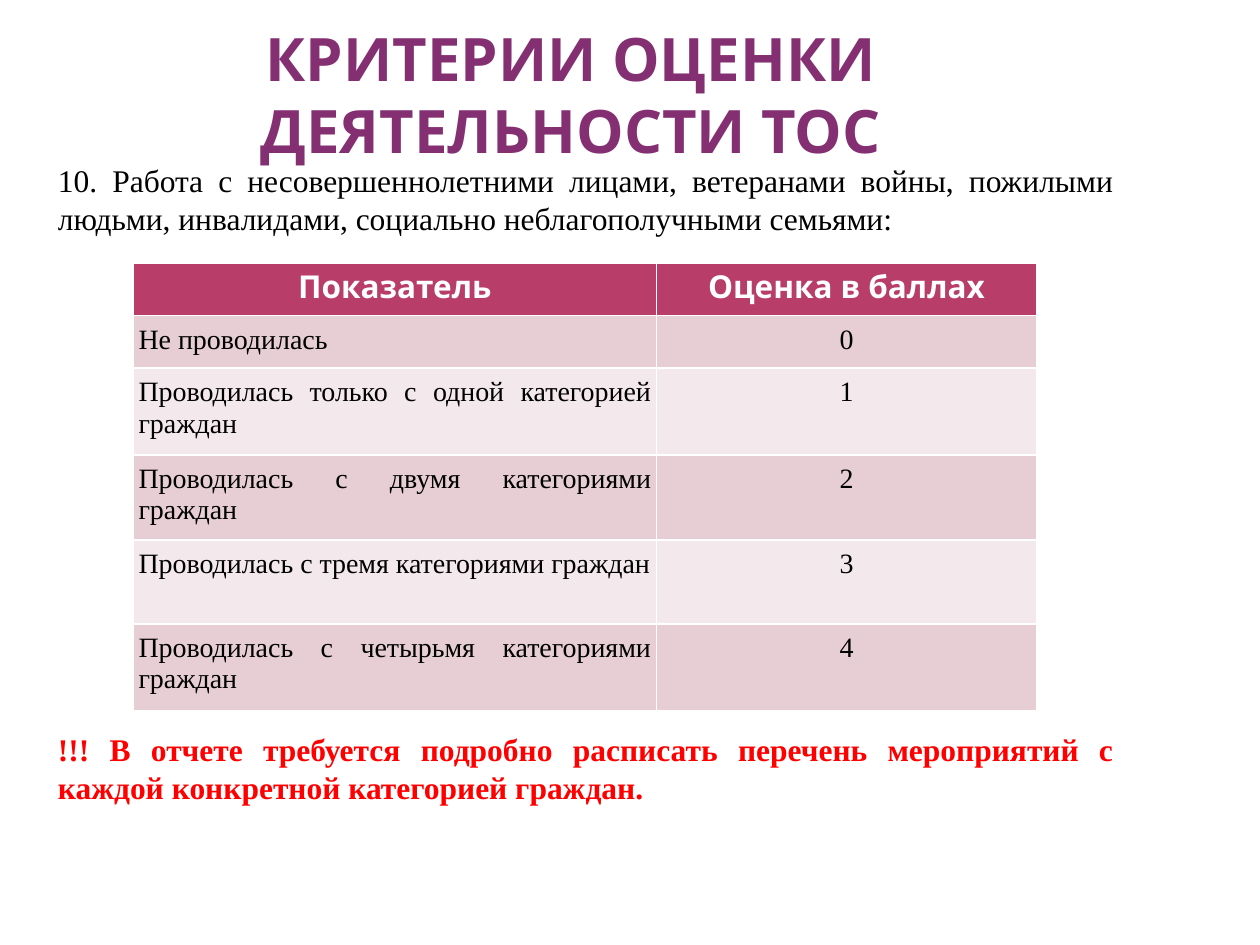
from pptx import Presentation
from pptx.dml.color import RGBColor
from pptx.enum.text import MSO_ANCHOR, MSO_AUTO_SIZE, PP_ALIGN
from pptx.util import Inches, Pt

WIDTH, HEIGHT = Inches(10), Inches(7.5)
SERIF, SANS = "Times New Roman", "Karla"
TITLE = "КРИТЕРИИ ОЦЕНКИ ДЕЯТЕЛЬНОСТИ ТОС"
CRITERION = ("10. Работа с несовершеннолетними лицами, ветеранами войны, "
             "пожилыми людьми, инвалидами, социально неблагополучными семьями:")
WARNING = ("!!! В отчете требуется подробно расписать перечень мероприятий "
           "с каждой конкретной категорией граждан.")
HEADER = ("Показатель", "Оценка в баллах")
INDICATORS = (
    "Не проводилась",
    "Проводилась только с одной категорией граждан",
    "Проводилась с двумя категориями граждан",
    "Проводилась с тремя категориями граждан",
    "Проводилась с четырьмя категориями граждан",
)
COLUMNS = (4.15, 3.02)
ROWS = (0.41, 0.42, 0.69, 0.67, 0.67, 0.69)
BANDS = ("E6CED4", "F3E8EB")


def color(code):
    return RGBColor.from_string(code)


def apply(target, values):
    for name, value in values.items():
        setattr(target, name, value)


def place(shape, box):
    left, top, width, height = box
    apply(shape, {
        "left": round(left * WIDTH), "top": round(top * HEIGHT),
        "width": round(width * WIDTH), "height": round(height * HEIGHT),
    })


def write(frame, text, align, size, name, code, bold=False):
    para = frame.paragraphs[0]
    para.alignment = align
    span = para.add_run()
    span.text = text
    apply(span.font, {"size": Pt(size), "name": name, "bold": bold})
    span.font.color.rgb = color(code)


def add_title(page, box):
    title = page.shapes.title
    place(title, box)
    apply(title.text_frame, {
        "word_wrap": True, "auto_size": MSO_AUTO_SIZE.NONE,
        "vertical_anchor": MSO_ANCHOR.BOTTOM,
        "margin_left": Inches(0.05), "margin_right": Inches(0.05),
        "margin_top": 0, "margin_bottom": 0,
    })
    write(title.text_frame, TITLE, PP_ALIGN.CENTER, 34.2, SANS, "852F73", True)


def add_statement(page, box, text, code, bold):
    statement = page.shapes.add_textbox(0, 0, 0, 0)
    place(statement, box)
    apply(statement.text_frame, {"word_wrap": True, "margin_left": Inches(0.18)})
    write(statement.text_frame, text, PP_ALIGN.JUSTIFY, 18, SERIF, code, bold)


def add_scores(page, box):
    frame = page.shapes.add_table(len(ROWS), len(COLUMNS), 0, 0, WIDTH, HEIGHT)
    place(frame, box)
    table = frame.table
    for column, share in zip(table.columns, COLUMNS):
        column.width = round(box[2] * WIDTH * share / sum(COLUMNS))
    for row, share in zip(table.rows, ROWS):
        row.height = round(box[3] * HEIGHT * share / sum(ROWS))

    for cell, text in zip(table.rows[0].cells, HEADER):
        cell.fill.solid()
        cell.fill.fore_color.rgb = color("B83D68")
        write(cell.text_frame, text, PP_ALIGN.CENTER, 18, SANS, "FFFFFF", True)

    for score, indicator in enumerate(INDICATORS):
        texts = (indicator, str(score))
        aligns = (PP_ALIGN.JUSTIFY, PP_ALIGN.CENTER)
        for cell, text, align in zip(table.rows[score + 1].cells, texts, aligns):
            apply(cell, {
                "margin_left": Inches(0.04), "margin_right": Inches(0.04),
                "margin_top": Inches(0.07), "margin_bottom": Inches(0.07),
            })
            cell.fill.solid()
            cell.fill.fore_color.rgb = color(BANDS[score % 2])
            write(cell.text_frame, text, align, 16, SERIF, "000000")


def main():
    deck = Presentation()
    apply(deck, {"slide_width": WIDTH, "slide_height": HEIGHT})
    page = deck.slides.add_slide(deck.slide_layouts[5])
    add_title(page, (0.02, 0.04, 0.866, 0.135))
    add_statement(page, (0.028, 0.164, 0.866, 0.1), CRITERION, "000000", False)
    add_scores(page, (0.106, 0.279, 0.717, 0.473))
    add_statement(page, (0.028, 0.766, 0.866, 0.1), WARNING, "FF0000", True)
    deck.save("out.pptx")


if __name__ == "__main__":
    main()
